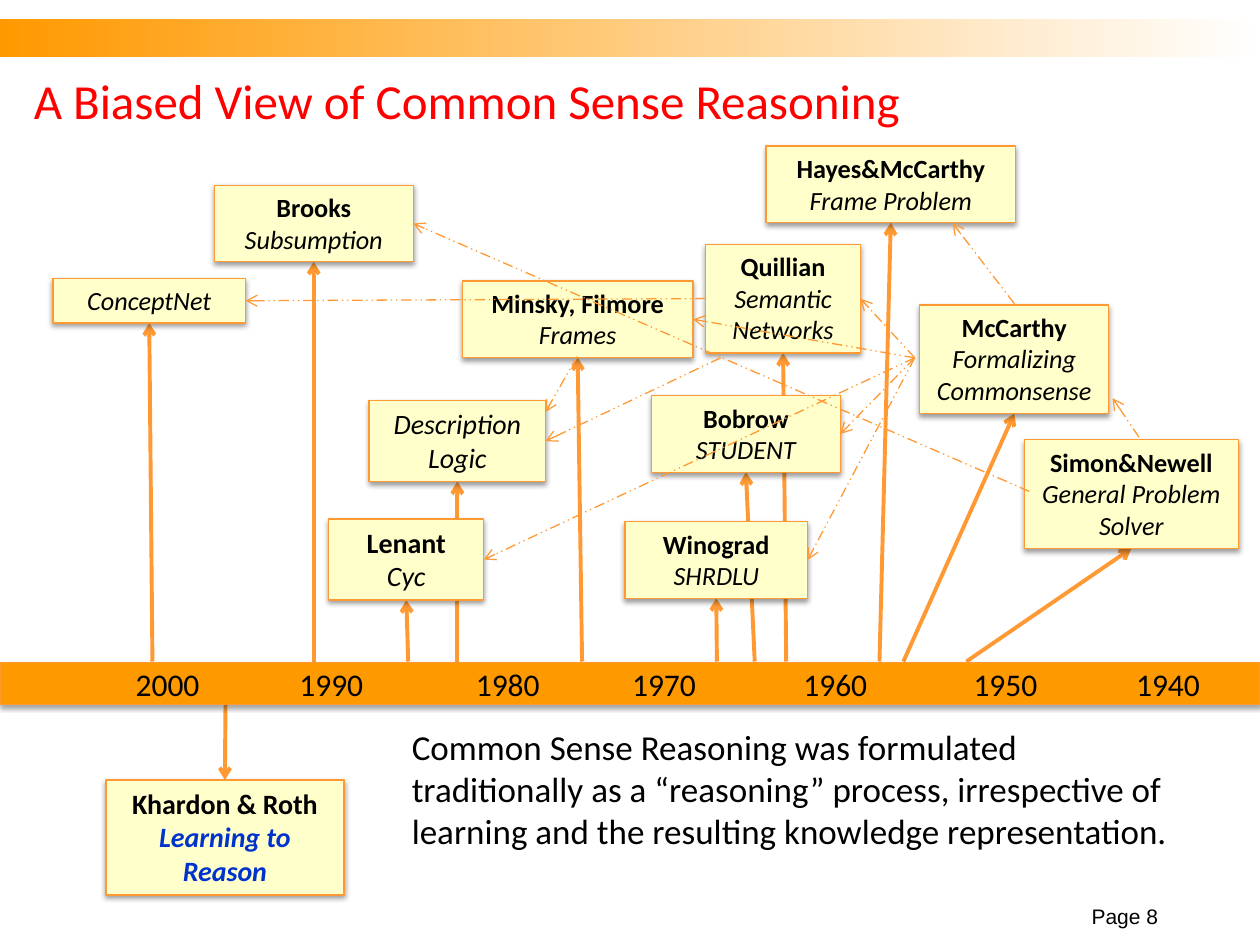
"""Build a slide that maps common sense reasoning work on a timeline."""
from lxml.etree import SubElement as Sub
from pptx import Presentation
from pptx.dml.color import RGBColor as RGB
from pptx.enum.dml import MSO_LINE as Dash
from pptx.enum.shapes import MSO_CONNECTOR as Link, MSO_SHAPE as Kind
from pptx.enum.text import MSO_ANCHOR as Anchor, PP_ALIGN as Align
from pptx.oxml.ns import qn
from pptx.util import Inches, Pt

THEME = {
    "bar": "FF9900", "edge": "FF9933", "note": "FFFFCC", "ink": "000000",
    "head": "FF0000", "blue": "0033CC", "white": "FFFFFF",
    "face": "Calibri", "plain": "Arial",
    "title": 28, "body": 20, "year": 18, "big": 16, "small": 15, "page": 12,
    "thick": 2.25, "thin": 0.75,
}
WIDE, HIGH, COLS = 10, 7.5, 100
CELL = WIDE / COLS

TITLE = "A Biased View of Common Sense Reasoning"
BODY = [
    "Common Sense Reasoning was formulated",
    "traditionally as a “reasoning” process, irrespective of learning "
    "and the resulting knowledge representation.",
]
PAGE = "Page 8"
YEARS = [(2000, 13.3), (1990, 26.3), (1980, 40.3), (1970, 52.7),
         (1960, 66.3), (1950, 79.8), (1940, 92.7)]

NOTES = [
    ("Hayes&McCarthy", "Frame Problem", "small", 2, 60.8, 11.6, 19.8, 69.8),
    ("Quillian", "Semantic Networks", "small", 3, 56, 19.4, 12.3, 62.4),
    ("", "ConceptNet", "small", 1, 4.2, 22.1, 15.3, 12.1),
    ("Brooks", "Subsumption", "small", 2, 17, 14.7, 15.8, 24.9),
    ("Minsky, Filmore", "Frames", "small", 2, 36.7, 22.3, 18.3, 46.2),
    ("Bobrow", "STUDENT", "small", 2, 51.7, 31.4, 15, 59.9),
    ("Winograd", "SHRDLU", "small", 2, 49.6, 41.4, 14.5, 56.9),
    ("Khardon & Roth", "Learning to Reason", "big", 3, 8.4, 61.9, 18.9, 17.9),
    ("", "Description Logic", "big", 2, 29.3, 31.8, 14, 36.3),
    ("Lenant", "Cyc", "big", 2, 26.1, 41.2, 12.3, 32.4),
    ("McCarthy", "Formalizing Commonsense", "small", 3, 73, 24.2, 15, 71.7),
    ("Simon&Newell", "General Problem Solver", "small", 3, 81.3, 34.9, 17, 76.7),
]
HUB = (72.6, 28.4)
SIDES = [(HUB, "Quillian"), (HUB, "Bobrow"), (HUB, "Winograd"),
         (HUB, "Minsky, Filmore"), (HUB, "Lenant"), ((81.7, 39), "Brooks"),
         ((56, 23.7), "ConceptNet"), ((57.2, 28.4), "Description Logic")]
TIES = [((90.4, 34.7), (88.3, 31.6)), ((80.5, 24.1), (75.6, 17.7)),
        ((45.8, 28.3), (43.3, 32.7))]
BAR_TOP, BAR_TALL = 52.6, 3.3


def put(item, **vals):
    for key, val in vals.items():
        setattr(item, key, val)


def tint(key):
    return RGB.from_string(THEME[key])


def span(*cells):
    return [Inches(n * CELL) for n in cells]


def write(frame, rows, size, align=Align.LEFT, face="face"):
    for n, (text, hue, style) in enumerate(rows):
        para = frame.paragraphs[0] if n == 0 else frame.add_paragraph()
        para.alignment = align
        run = para.add_run()
        run.text = text
        put(run.font, name=THEME[face], size=Pt(THEME[size]), **style)
        run.font.color.rgb = tint(hue)


def block(slide, place, fill, alpha):
    shape = slide.shapes.add_shape(Kind.RECTANGLE, *span(*place))
    shape.fill.solid()
    shape.fill.fore_color.rgb = tint(fill)
    put(shape.line, width=Pt(THEME["thin"]))
    shape.line.color.rgb = tint("edge")
    shape.shadow.inherit = False
    glow = shape._element.spPr.find(qn("a:effectLst"))
    shade = Sub(glow, qn("a:outerShdw"), blurRad=str(Pt(3.1)),
                dist=str(Pt(1.6)), dir="5400000", rotWithShape="0")
    ink = Sub(shade, qn("a:srgbClr"), val=THEME["ink"])
    Sub(ink, qn("a:alpha"), val=str(alpha * 1000))
    put(shape.text_frame, word_wrap=True)
    return shape


def arrow(slide, start, end, width, dash=None):
    line = slide.shapes.add_connector(Link.STRAIGHT, *span(*start, *end))
    put(line.line, width=Pt(THEME[width]), dash_style=dash)
    line.line.color.rgb = tint("edge")
    Sub(line.line._get_or_add_ln(), qn("a:tailEnd"), type="arrow")
    Sub(line._element.spPr, qn("a:effectLst"))


def label(slide, place, rows, size, anchor, **vals):
    frame = slide.shapes.add_textbox(*span(*place)).text_frame
    put(frame, word_wrap=True, vertical_anchor=anchor)
    write(frame, rows, size, **vals)


def band(slide):
    shape = slide.shapes.add_shape(Kind.RECTANGLE, *span(0, 1.5, COLS, 3))
    shape.shadow.inherit = False
    shape.line.fill.background()
    shape.fill.gradient()
    shape.fill.gradient_angle = 0
    for stop, hue, spot in zip(shape.fill.gradient_stops, ("bar", "white"), (0, 1)):
        stop.color.rgb = tint(hue)
        stop.position = spot


def scale(slide):
    frame = block(slide, (0, BAR_TOP, COLS, BAR_TALL), "bar", 35).text_frame
    put(frame, margin_left=0, margin_right=0, vertical_anchor=Anchor.MIDDLE)
    tabs = Sub(frame.paragraphs[0]._p.get_or_add_pPr(), qn("a:tabLst"))
    for _, mid in YEARS:
        Sub(tabs, qn("a:tab"), pos=str(span(mid)[0]), algn="ctr")
    text = "".join(f"\t{year}" for year, _ in YEARS)
    write(frame, [(text, "ink", {})], "year")


def chart(slide):
    boxes = {}
    for name, work, size, lines, left, top, width, foot in NOTES:
        tall = (lines * THEME[size] * 1.22 / 72 + 0.1) / CELL
        boxes[name or work] = (left, top, width, tall)
        below = top > BAR_TOP
        start = BAR_TOP + BAR_TALL if below else BAR_TOP - 0.1
        tip = top if below else top + tall
        arrow(slide, (foot, start), (left + width / 2, tip), "thick")
    for name, work, size, *_ in NOTES:
        below = boxes[name or work][1] > BAR_TOP
        rows = [(name, "ink", {"bold": True})] if name else []
        rows.append((work, "blue" if below else "ink",
                     {"bold": below, "italic": True}))
        shape = block(slide, boxes[name or work], "note", 38)
        put(shape.text_frame, vertical_anchor=Anchor.TOP)
        write(shape.text_frame, rows, size, Align.CENTER)
    ends = []
    for start, key in SIDES:
        left, top, width, tall = boxes[key]
        ends.append((start, (left + width, top + tall / 2)))
    for start, end in ends + TIES:
        arrow(slide, start, end, "thin", Dash.DASH_DOT_DOT)


def main():
    deck = Presentation()
    put(deck, slide_width=Inches(WIDE), slide_height=Inches(HIGH))
    slide = deck.slides.add_slide(deck.slide_layouts[6])
    band(slide)
    chart(slide)
    scale(slide)
    label(slide, (1.7, 5, 90, 5.8), [(TITLE, "head", {})], "title", Anchor.MIDDLE)
    label(slide, (31.7, 57.1, 63.3, 16), [(text, "ink", {}) for text in BODY],
          "body", Anchor.TOP)
    label(slide, (82.9, 71.7, 10, 2.5), [(PAGE, "ink", {})], "page",
          Anchor.BOTTOM, align=Align.RIGHT, face="plain")
    deck.save("out.pptx")


if __name__ == "__main__":
    main()
